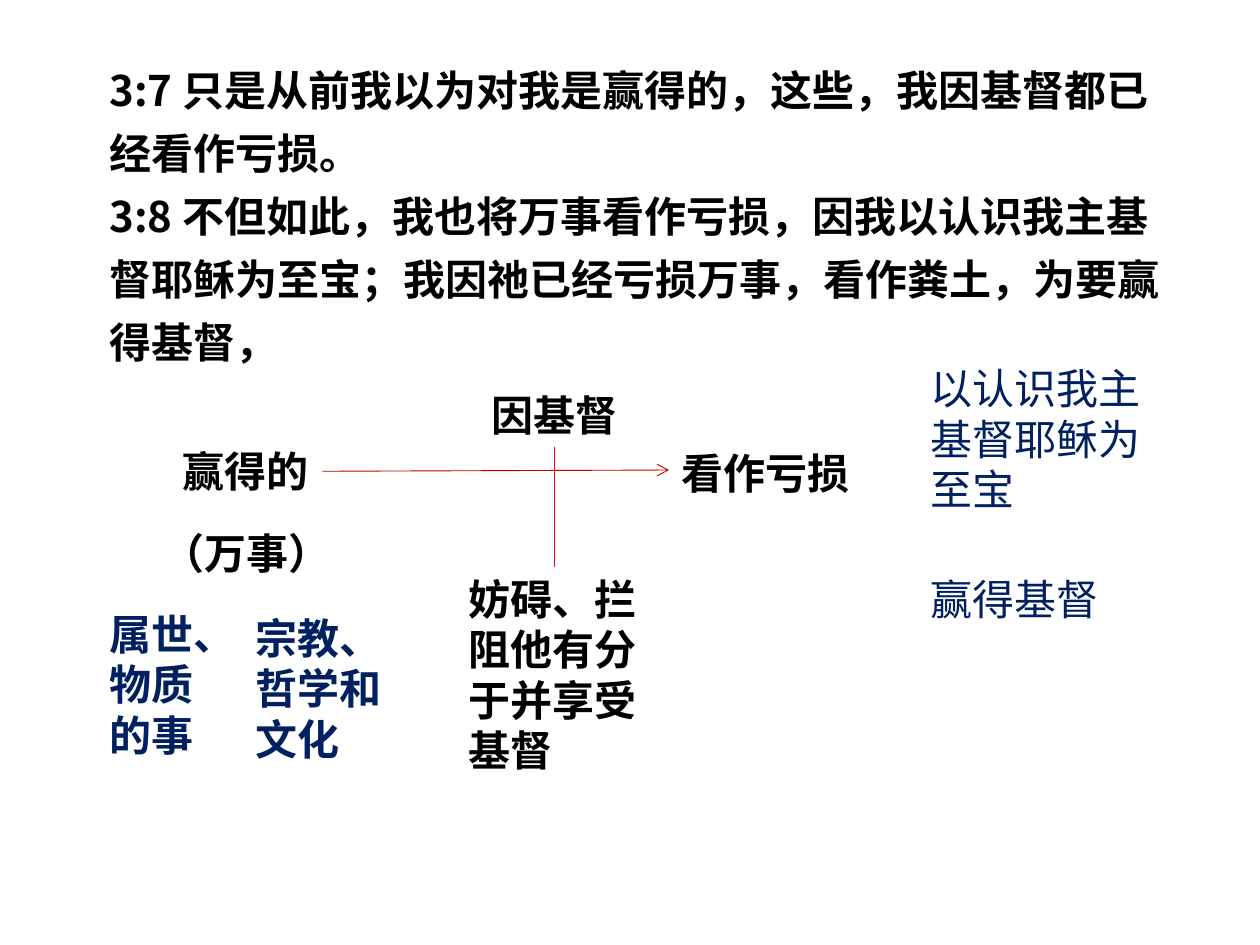
"""Builds a slide that diagrams Philippians 3:7-8."""
from dataclasses import dataclass

from lxml.etree import SubElement
from pptx import Presentation
from pptx.dml.color import RGBColor
from pptx.enum.shapes import MSO_CONNECTOR
from pptx.enum.text import MSO_AUTO_SIZE
from pptx.oxml.ns import qn
from pptx.slide import Slide
from pptx.util import Pt


@dataclass(frozen=True)
class Theme:
    """Colours, fonts and sizes of the slide."""
    black: RGBColor = RGBColor(0, 0, 0)
    navy: RGBColor = RGBColor(0x00, 0x20, 0x60)
    dark_red: RGBColor = RGBColor(0xC0, 0, 0)
    red: RGBColor = RGBColor(0xFF, 0, 0)
    cjk: str = "Noto Sans CJK SC"
    latin: str = "Calibri"
    size: float = 24
    line: float = 0.5


THEME = Theme()


@dataclass(frozen=True)
class Label:
    """A text box, placed in points."""
    paragraphs: tuple[str, ...]
    x: float
    y: float
    w: float
    h: float = 36
    color: RGBColor = THEME.black
    font: str = THEME.cjk
    bold: bool = True
    wrap: bool = False
    spacing: float = 1.0


@dataclass(frozen=True)
class Line:
    """A straight line, placed in points."""
    x1: float
    y1: float
    x2: float
    y2: float
    color: RGBColor
    arrow: bool = False


LABELS = (
    Label(("3:7 只是从前我以为对我是赢得的，这些，我因基督都已经看作亏损。",
           "3:8 不但如此，我也将万事看作亏损，因我以认识我主基督耶稣为至宝；"
           "我因祂已经亏损万事，看作粪土，为要赢得基督，"),
          55.4, 25.9, 620.6, 188.6, wrap=True, spacing=1.25),
    Label(("（万事）",), 85.7, 298.1, 110.9),
    Label(("赢得的",), 97.2, 251.3, 86.4),
    Label(("看作亏损",), 382.3, 252, 110.9),
    Label(("因基督",), 273.6, 218.9, 86.4),
    Label(("妨碍、拦阻他有分于并享受基督",), 260.6, 324, 112.3, 123.8,
          font=THEME.latin, wrap=True),
    Label(("属世、物质的事",), 55.4, 344.2, 69.1, 94.3,
          THEME.navy, THEME.latin, wrap=True),
    Label(("宗教、哲学和文化",), 139, 346.3, 87.8, 94.3,
          THEME.navy, THEME.latin, wrap=True),
    Label(("以认识我主基督耶稣为至宝",), 524.9, 203.8, 155.5, 94.3,
          THEME.navy, bold=False, wrap=True),
    Label(("赢得基督",), 524.9, 324, 110.2, color=THEME.navy, bold=False),
)

LINES = (
    Line(184.3, 269.3, 382.3, 268.6, THEME.dark_red, arrow=True),
    Line(316.8, 255.6, 316.8, 324, THEME.red),
)


def draw_label(s: Slide, label: Label) -> None:
    """Draw one text box."""
    tf = s.shapes.add_textbox(Pt(label.x), Pt(label.y),
                              Pt(label.w), Pt(label.h)).text_frame
    tf.word_wrap = label.wrap
    tf.auto_size = MSO_AUTO_SIZE.SHAPE_TO_FIT_TEXT
    for i, text in enumerate(label.paragraphs):
        p = tf.add_paragraph() if i else tf.paragraphs[0]
        p.line_spacing = label.spacing
        r = p.add_run()
        r.text = text
        r.font.size = Pt(THEME.size)
        r.font.bold = label.bold
        r.font.color.rgb = label.color
        r.font.name = label.font
        ea = SubElement(r.font._element, qn("a:ea"))
        ea.set("typeface", THEME.cjk)


def draw_line(s: Slide, line: Line) -> None:
    """Draw one connector, with an open arrowhead if wanted."""
    c = s.shapes.add_connector(MSO_CONNECTOR.STRAIGHT, Pt(line.x1), Pt(line.y1),
                               Pt(line.x2), Pt(line.y2))
    c.line.color.rgb = line.color
    c.line.width = Pt(THEME.line)
    if line.arrow:
        SubElement(c.line._get_or_add_ln(), qn("a:tailEnd")).set("type", "arrow")
    SubElement(c._element.spPr, qn("a:effectLst"))


def main() -> None:
    """Build and save the slide."""
    prs = Presentation()
    prs.slide_width, prs.slide_height = Pt(720), Pt(540)
    s = prs.slides.add_slide(prs.slide_layouts[6])
    for label in LABELS:
        draw_label(s, label)
    for line in LINES:
        draw_line(s, line)
    prs.save("out.pptx")


if __name__ == "__main__":
    main()
